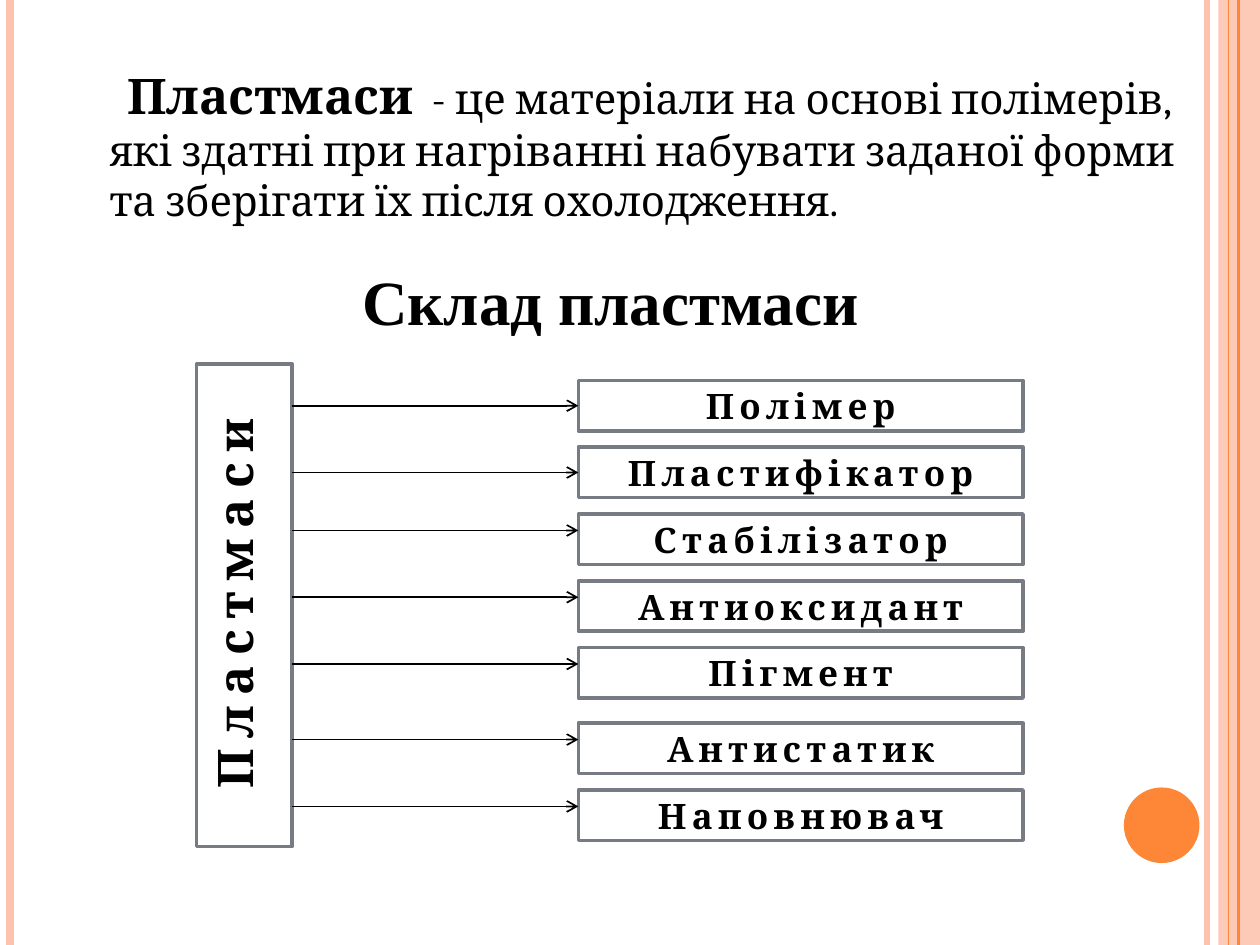
from lxml import etree
from pptx import Presentation
from pptx.dml.color import RGBColor
from pptx.enum.shapes import MSO_CONNECTOR, MSO_SHAPE
from pptx.enum.text import MSO_ANCHOR, MSO_AUTO_SIZE, PP_ALIGN
from pptx.oxml.ns import qn
from pptx.util import Inches, Pt

LINE, RECT, OVAL = MSO_CONNECTOR.STRAIGHT, MSO_SHAPE.RECTANGLE, MSO_SHAPE.OVAL
CENTER, TOP, MIDDLE = PP_ALIGN.CENTER, MSO_ANCHOR.TOP, MSO_ANCHOR.MIDDLE
NO_FIT = MSO_AUTO_SIZE.NONE
LEFT_SIDE = 1

COLS, ROWS = 100, 75
CELL = Inches(0.1)
BLACK, WHITE, GREY = "000000", "FFFFFF", "777C84"
ORANGE, PEACH = "FE8637", "FEC3AE"
COMPONENTS = ["Полімер", "Пластифікатор", "Стабілізатор", "Антиоксидант",
              "Пігмент", "Антистатик", "Наповнювач"]


def rgb(value):
    return RGBColor.from_string(value)


def grid(*cells):
    """Turn columns and rows into lengths."""
    return [round(c * CELL) for c in cells]


def place(sp, box):
    sp.left, sp.top, sp.width, sp.height = grid(*box)


def set_alpha(fill_or_line, percent):
    color = fill_or_line.find(".//" + qn("a:srgbClr"))
    etree.SubElement(color, qn("a:alpha")).set("val", str(percent * 1000))


def add_run(p, text, size, name="Cambria", bold=True, spacing=0):
    r = p.add_run()
    r.text = text
    for key, value in {"size": Pt(size), "name": name, "bold": bold}.items():
        setattr(r.font, key, value)
    r.font.color.rgb = rgb(BLACK)
    if spacing:
        r.font._element.set("spc", str(spacing * 100))


def add_line(s, start, end, color, width, arrow=False):
    line = s.shapes.add_connector(LINE, *grid(*start, *end))
    line.line.color.rgb = rgb(color)
    line.line.width = Pt(width)
    if arrow:
        etree.SubElement(line.line._get_or_add_ln(), qn("a:tailEnd")).set("type", "arrow")
    etree.SubElement(line._element.spPr, qn("a:effectLst"))
    return line


def add_shape(s, kind, box, fill, outline=None):
    sp = s.shapes.add_shape(kind, *grid(*box))
    sp.shadow.inherit = False
    sp.fill.solid()
    sp.fill.fore_color.rgb = rgb(fill)
    if outline:
        sp.line.color.rgb = rgb(outline)
        sp.line.width = Pt(2)
    else:
        sp.line.fill.background()
    return sp


def add_border(s):
    """Stripes along both slide edges and the orange dot."""
    band = add_shape(s, RECT, (96.7, 0, COLS - 96.7, ROWS), PEACH)
    set_alpha(band._element.spPr, 87)
    for col, color, width in [(95.8, PEACH, 3), (0.8, PEACH, 4.5),
                              (98.3, ORANGE, 1.5), (97.5, ORANGE, 0.75)]:
        add_line(s, (col, 0), (col, ROWS), color, width)
    add_shape(s, OVAL, (89.2, 62.5, 6, 6), ORANGE)


def fill_definition(sp, box):
    place(sp, box)
    tf = sp.text_frame
    tf.auto_size, tf.vertical_anchor = NO_FIT, TOP
    p = tf.paragraphs[0]
    p.space_before = Pt(6)
    pPr = p._p.get_or_add_pPr()
    pPr.set("marL", str(Inches(0.3)))
    pPr.set("indent", str(Inches(0.14)))
    etree.SubElement(pPr, qn("a:buNone"))
    add_run(p, "Пластмаси", 28)
    add_run(p, "  - це матеріали на основі полімерів, які здатні при нагріванні "
               "набувати заданої форми та зберігати їх після охолодження.", 24, bold=False)


def fill_heading(sp, box):
    place(sp, box)
    tf = sp.text_frame
    tf.auto_size, tf.vertical_anchor = NO_FIT, TOP
    p = tf.paragraphs[0]
    p.alignment = CENTER
    add_run(p, "Склад пластмаси", 36, name="Times New Roman")


def add_spine(s, box):
    """Tall box with its name reading upwards."""
    left, top, width, height = box
    add_shape(s, RECT, box, WHITE, GREY)
    label = s.shapes.add_textbox(*grid(left + 0.1, top + 2, width - 0.8, height - 4.3))
    tf = label.text_frame
    tf.word_wrap = True
    tf._txBody.bodyPr.set("vert", "vert270")
    p = tf.paragraphs[0]
    p.alignment = CENTER
    add_run(p, "Пластмаси", 28, spacing=6)


def add_component(s, text, box):
    sp = add_shape(s, RECT, box, WHITE, GREY)
    tf = sp.text_frame
    tf.word_wrap, tf.vertical_anchor = True, MIDDLE
    p = tf.paragraphs[0]
    p.alignment = CENTER
    add_run(p, text, 20, spacing=3)
    return sp


def add_composition(s, box):
    """Spine on the left with an arrow to each component on the right."""
    left, top, width, height = box
    spine_width, item_width, item_height = 7.6, 35.3, 4
    pitch, extra_gap, raised = 5.3, 0.7, 0.7
    spine_right, item_left = left + spine_width, left + width - item_width
    add_spine(s, (left, top, spine_width, height))
    for i, text in enumerate(COMPONENTS):
        item_top = top + 1.3 + i * pitch + (extra_gap if i > 4 else 0)
        item = add_component(s, text, (item_left, item_top, item_width, item_height))
        centred = i < 2
        row = item_top + item_height / 2 - (0 if centred else raised)
        arrow = add_line(s, (spine_right, row), (item_left, row), BLACK, 1, arrow=True)
        if centred:
            arrow.end_connect(item, LEFT_SIDE)


def main():
    prs = Presentation()
    prs.slide_width, prs.slide_height = grid(COLS, ROWS)
    s = prs.slides.add_slide(prs.slide_layouts[1])
    s.background.fill.solid()
    s.background.fill.fore_color.rgb = rgb(WHITE)
    add_border(s)
    fill_definition(s.placeholders[1], (4.7, 4.7, 89.8, 51.3))
    add_composition(s, (15.6, 28.9, 65.6, 38.3))
    fill_heading(s.shapes.title, (17.2, 20.3, 62.5, 7.1))
    prs.save("out.pptx")


if __name__ == "__main__":
    main()
